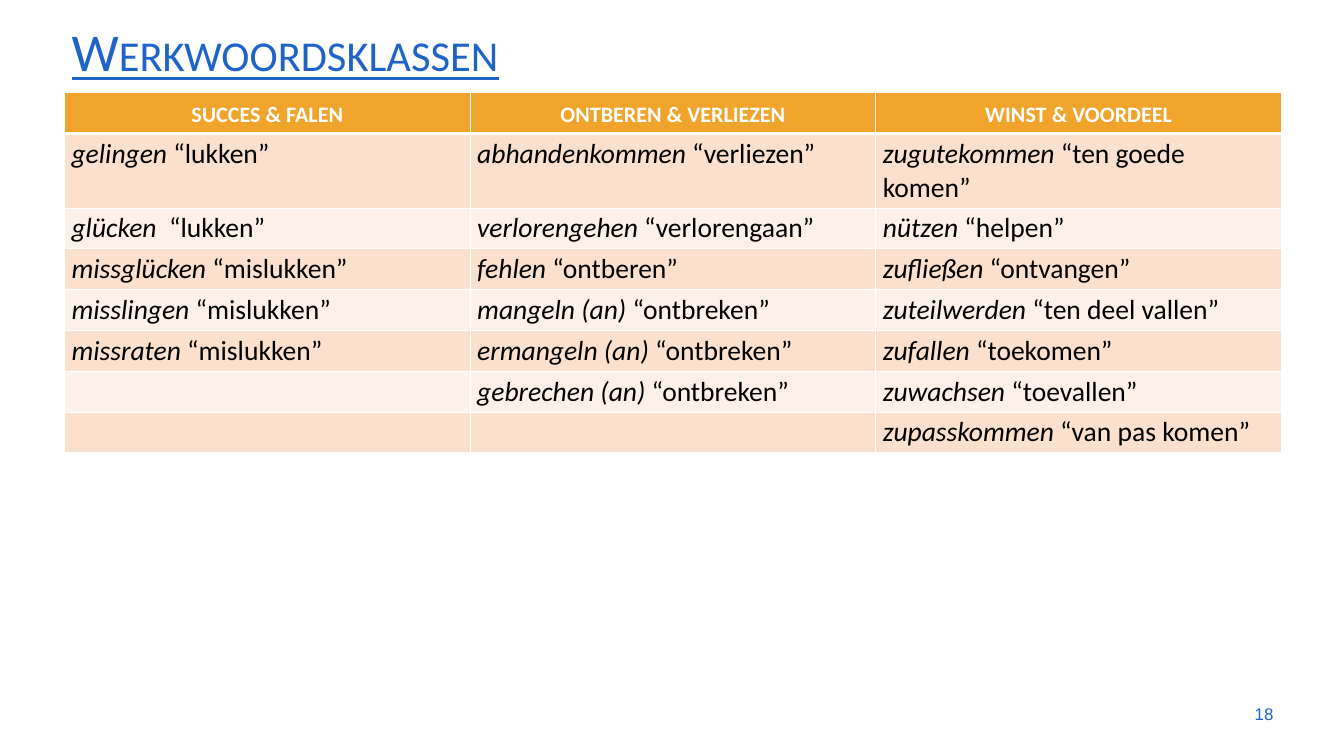
from dataclasses import dataclass

from lxml.etree import SubElement
from pptx import Presentation
from pptx.dml.color import RGBColor
from pptx.enum.text import MSO_ANCHOR, PP_ALIGN
from pptx.oxml.ns import qn
from pptx.util import Pt

# Content
TITLE = "Werkwoordsklassen"
PAGE_NUMBER = "18"
VERB_CLASSES = {
    "succes & falen": [
        ("gelingen", " “lukken”"),
        ("glücken ", " “lukken”"),
        ("missglücken", " “mislukken”"),
        ("misslingen", " “mislukken”"),
        ("missraten", " “mislukken”"),
    ],
    "ontberen & verliezen": [
        ("abhandenkommen", " “verliezen”"),
        ("verlorengehen", " “verlorengaan”"),
        ("fehlen", " “ontberen”"),
        ("mangeln (an)", " “ontbreken”"),
        ("ermangeln (an)", " “ontbreken”"),
        ("gebrechen (an)", " “ontbreken”"),
    ],
    "winst & voordeel": [
        ("zugutekommen", " “ten goede komen”"),
        ("nützen", " “helpen”"),
        ("zufließen", " “ontvangen”"),
        ("zuteilwerden", " “ten deel vallen”"),
        ("zufallen", " “toekomen”"),
        ("zuwachsen", " “toevallen”"),
        ("zupasskommen", " “van pas komen”"),
    ],
}


@dataclass(frozen=True)
class Theme:
    blue: str = "1E64C8"
    header: str = "F1A42B"
    bands: tuple = ("FAE0CD", "FCF0E8")
    white: str = "FFFFFF"
    black: str = "000000"
    font: str = "Calibri"
    number_font: str = "Arial"
    title_size: float = 54
    table_size: float = 28
    number_size: float = 17.1


THEME = Theme()

# Layout in points
SLIDE_SIZE = (1365, 768)
TITLE_BOX = (65.5, 20.2, 1237, 67.7)
TABLE_LEFT, TABLE_TOP = 65.5, 94.3
COLUMN_WIDTH, ROW_HEIGHT = 412, 29.5
NUMBER_BOX = (1227.6, 704.9, 72.7, 41)


def add_run(paragraph, text, font, size, color, bold=False, italic=False, small_caps=False):
    run = paragraph.add_run()
    run.text = text
    run.font.name = font
    run.font.size = Pt(size)
    run.font.color.rgb = RGBColor.from_string(color)
    run.font.bold = bold
    run.font.italic = italic
    if small_caps:
        run.font._element.set("cap", "small")
    return run


def style_cell(cell, fill, top=1, bottom=1):
    properties = cell._tc.get_or_add_tcPr()
    for side, width in (("L", 1), ("R", 1), ("T", top), ("B", bottom)):
        line = SubElement(properties, qn(f"a:ln{side}"), w=str(Pt(width)))
        solid = SubElement(line, qn("a:solidFill"))
        SubElement(solid, qn("a:srgbClr"), val=THEME.white)
    cell.fill.solid()
    cell.fill.fore_color.rgb = RGBColor.from_string(fill)


presentation = Presentation()
presentation.slide_width, presentation.slide_height = map(Pt, SLIDE_SIZE)
slide = presentation.slides.add_slide(presentation.slide_layouts[5])

# Title
title = slide.shapes.title
title.left, title.top, title.width, title.height = map(Pt, TITLE_BOX)
title.text_frame.vertical_anchor = MSO_ANCHOR.BOTTOM
title.text_frame.word_wrap = True
paragraph = title.text_frame.paragraphs[0]
paragraph.alignment = PP_ALIGN.LEFT
paragraph.line_spacing = 0.9
title_run = add_run(paragraph, TITLE, THEME.font, THEME.title_size, THEME.blue, small_caps=True)
title_run.font.underline = True

# Table of verb classes, one class per column
row_count = 1 + max(map(len, VERB_CLASSES.values()))
column_count = len(VERB_CLASSES)
table = slide.shapes.add_table(
    row_count, column_count, Pt(TABLE_LEFT), Pt(TABLE_TOP),
    Pt(COLUMN_WIDTH * column_count), Pt(ROW_HEIGHT * row_count),
).table
for row in table.rows:
    row.height = Pt(ROW_HEIGHT)

for column, (heading, verbs) in enumerate(VERB_CLASSES.items()):
    table.columns[column].width = Pt(COLUMN_WIDTH)
    header_cell = table.cell(0, column)
    style_cell(header_cell, THEME.header, bottom=3)
    paragraph = header_cell.text_frame.paragraphs[0]
    paragraph.alignment = PP_ALIGN.CENTER
    add_run(paragraph, heading, THEME.font, THEME.table_size, THEME.white,
            bold=True, small_caps=True)

    for row in range(1, row_count):
        style_cell(table.cell(row, column), THEME.bands[(row - 1) % 2],
                   top=3 if row == 1 else 1)
    for row, (verb, meaning) in enumerate(verbs, start=1):
        paragraph = table.cell(row, column).text_frame.paragraphs[0]
        add_run(paragraph, verb, THEME.font, THEME.table_size, THEME.black, italic=True)
        add_run(paragraph, meaning, THEME.font, THEME.table_size, THEME.black)

# Page number
number_frame = slide.shapes.add_textbox(*map(Pt, NUMBER_BOX)).text_frame
number_frame.word_wrap = True
number_frame.vertical_anchor = MSO_ANCHOR.MIDDLE
paragraph = number_frame.paragraphs[0]
paragraph.alignment = PP_ALIGN.RIGHT
add_run(paragraph, PAGE_NUMBER, THEME.number_font, THEME.number_size, THEME.blue)

presentation.save("out.pptx")
